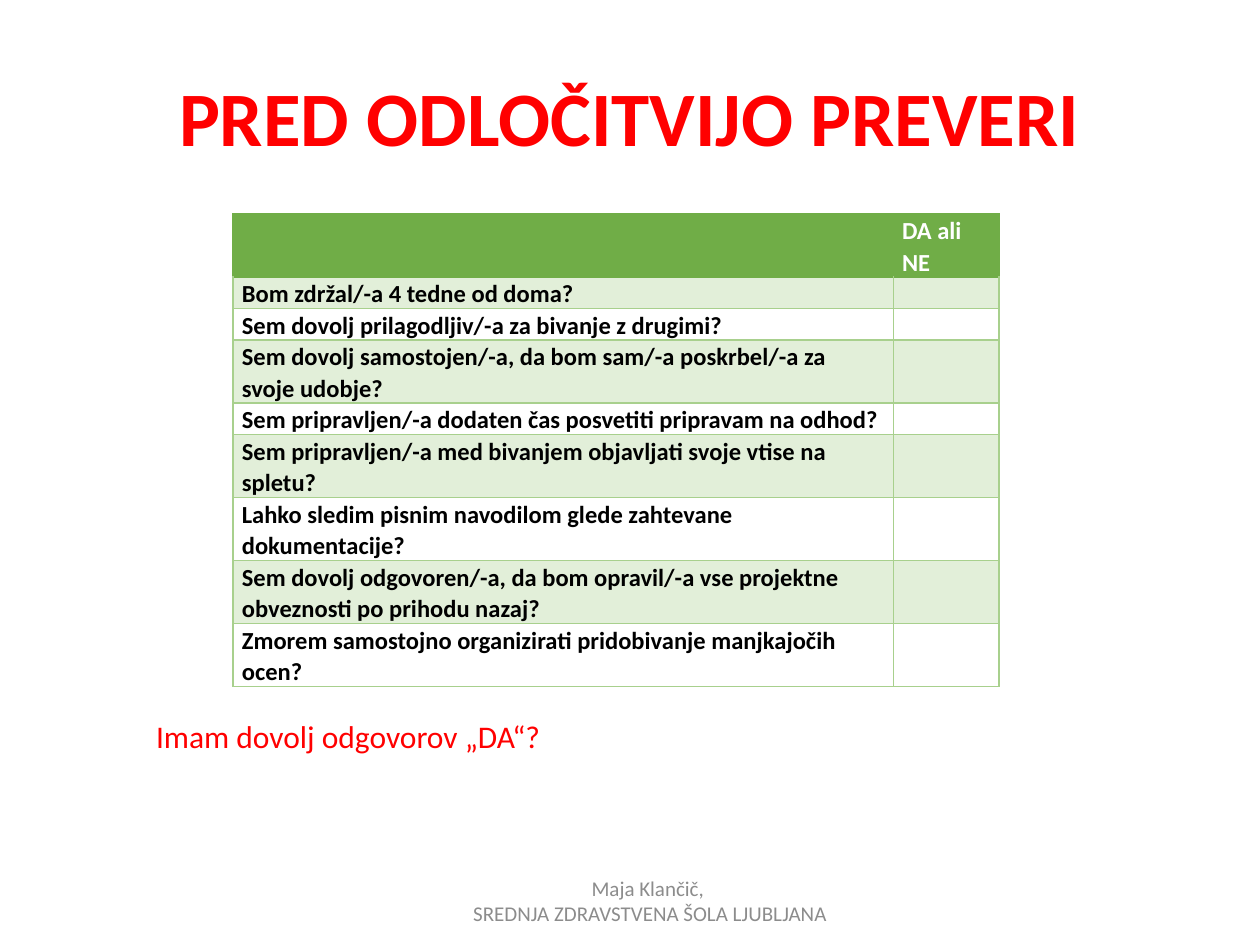
from dataclasses import dataclass

from lxml.etree import SubElement
from pptx import Presentation
from pptx.dml.color import RGBColor
from pptx.enum.text import MSO_ANCHOR, PP_ALIGN
from pptx.oxml.ns import qn
from pptx.util import Inches, Pt


@dataclass(frozen=True)
class Theme:
    font: str = "Calibri"
    red: str = "FF0000"
    gray: str = "8C8C8C"
    black: str = "000000"
    white: str = "FFFFFF"
    outline: str = "467AB8"
    header: str = "70AD47"
    band: str = "E2EFD9"
    border: str = "A8D08D"
    title_size: int = 44
    body_size: int = 18
    table_size: int = 14
    footer_size: int = 12


theme = Theme()


def add_line(parent, tag, color, width):
    line = SubElement(parent, qn(tag), w=str(Pt(width)))
    fill = SubElement(line, qn("a:solidFill"))
    SubElement(fill, qn("a:srgbClr"), val=color)
    return line


def write_paragraph(paragraph, text, color, formats):
    run = paragraph.add_run()
    run.text = text
    run.font.color.rgb = RGBColor.from_string(color)
    for name, value in formats.items():
        setattr(run.font, name, value)
    return run


presentation = Presentation()
presentation.slide_width = Inches(10)
presentation.slide_height = Inches(7.5)
slide = presentation.slides.add_slide(presentation.slide_layouts[6])

# Title, footer and closing question
text_boxes = [
    {"box": (0.5, 0.29, 9, 1.25), "lines": ["PRED ODLOČITVIJO PREVERI"],
     "color": theme.red, "size": theme.title_size, "bold": True,
     "align": PP_ALIGN.CENTER, "anchor": MSO_ANCHOR.MIDDLE, "outline": theme.outline},
    {"box": (2.19, 6.95, 5.94, 0.4),
     "lines": ["Maja Klančič, ", "SREDNJA ZDRAVSTVENA ŠOLA LJUBLJANA"],
     "color": theme.gray, "size": theme.footer_size, "bold": False,
     "align": PP_ALIGN.CENTER, "anchor": MSO_ANCHOR.MIDDLE, "outline": None},
    {"box": (1.14, 5.64, 6.98, 0.4), "lines": ["Imam dovolj odgovorov „DA“?"],
     "color": theme.red, "size": theme.body_size, "bold": False,
     "align": PP_ALIGN.LEFT, "anchor": MSO_ANCHOR.TOP, "outline": None},
]
for item in text_boxes:
    shape = slide.shapes.add_textbox(*map(Inches, item["box"]))
    frame = shape.text_frame
    frame.word_wrap = True
    frame.vertical_anchor = item["anchor"]
    formats = {"name": theme.font, "size": Pt(item["size"]), "bold": item["bold"]}
    for index, text in enumerate(item["lines"]):
        paragraph = frame.add_paragraph() if index else frame.paragraphs[0]
        paragraph.alignment = item["align"]
        run = write_paragraph(paragraph, text, item["color"], formats)
        if item["outline"]:
            properties = run.font._element
            properties.insert(0, add_line(properties, "a:ln", item["outline"], 0.83))

# Checklist: question and number of text lines in its row
line_height = 0.25
questions = [
    ("Bom zdržal/-a 4 tedne od doma?", 1),
    ("Sem dovolj prilagodljiv/-a za bivanje z drugimi?", 1),
    ("Sem dovolj samostojen/-a, da bom sam/-a poskrbel/-a za svoje udobje?", 2),
    ("Sem pripravljen/-a dodaten čas posvetiti pripravam na odhod?", 1),
    ("Sem pripravljen/-a med bivanjem objavljati svoje vtise na spletu?", 2),
    ("Lahko sledim pisnim navodilom glede zahtevane dokumentacije?", 2),
    ("Sem dovolj odgovoren/-a, da bom opravil/-a vse projektne obveznosti po prihodu nazaj?", 2),
    ("Zmorem samostojno organizirati pridobivanje manjkajočih ocen?", 2),
]
rows = [("", "DA ali NE", 2)] + [(question, "", lines) for question, lines in questions]
table_height = line_height * sum(row[2] for row in rows)
table = slide.shapes.add_table(
    len(rows), 2, Inches(1.85), Inches(1.7), Inches(6.08), Inches(table_height)).table
table.first_row = False
table.horz_banding = False
for column, width in zip(table.columns, (5.24, 0.84)):
    column.width = Inches(width)

cell_formats = {"margin_left": Inches(0.07), "margin_right": Inches(0.07),
                "margin_top": 0, "margin_bottom": 0}
table_font = {"name": theme.font, "size": Pt(theme.table_size), "bold": True}
for row_index, (question, answer, lines) in enumerate(rows):
    table.rows[row_index].height = Inches(line_height * lines)
    is_header = row_index == 0
    for column_index, text in enumerate((question, answer)):
        cell = table.cell(row_index, column_index)
        for name, value in cell_formats.items():
            setattr(cell, name, value)

        # Borders, with the header's edge shared by the first question
        properties = cell._tc.get_or_add_tcPr()
        for side in "LRTB":
            dark = is_header or (row_index == 1 and side == "T")
            add_line(properties, f"a:ln{side}", theme.header if dark else theme.border, 1)

        # Header and banded fills
        if is_header or row_index % 2:
            cell.fill.solid()
            cell.fill.fore_color.rgb = RGBColor.from_string(
                theme.header if is_header else theme.band)
        else:
            cell.fill.background()

        # Text; an empty cell keeps the table's type size
        paragraph = cell.text_frame.paragraphs[0]
        paragraph.line_spacing = 1.07
        if text:
            write_paragraph(paragraph, text, theme.white if is_header else theme.black, table_font)
        else:
            SubElement(paragraph._p, qn("a:endParaRPr"), sz=str(theme.table_size * 100))

presentation.save("out.pptx")
